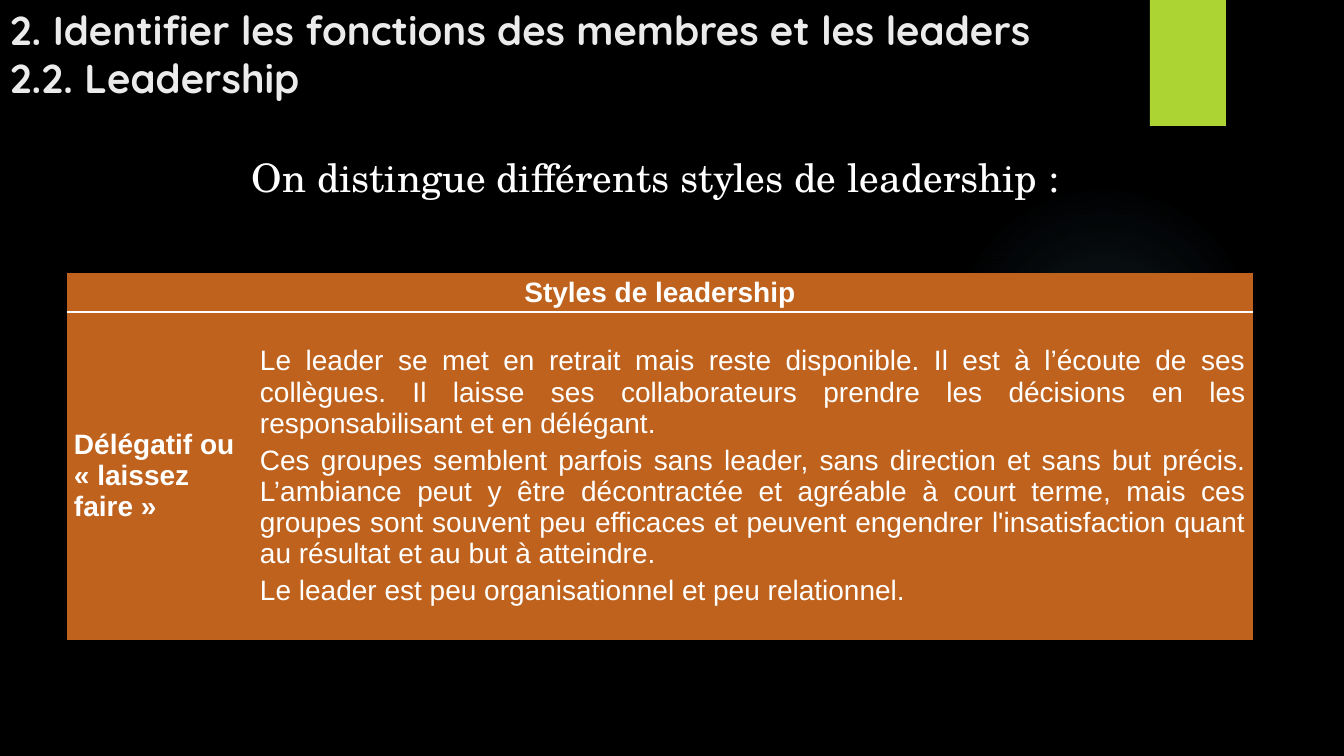
from dataclasses import dataclass

from pptx import Presentation
from pptx import oxml
from pptx import util as u
from pptx.dml import color
from pptx.enum import shapes, text
from pptx.oxml import ns


@dataclass(frozen=True)
class Theme:
    background: str = "000000"
    accent: str = "ACD433"
    glow: str = "7AC4F0"
    table: str = "BF621D"
    heading: str = "EBEBEB"
    body: str = "FFFFFF"
    heading_size: float = 28.8
    intro_size: int = 28
    table_size: int = 20
    rule_width: int = 2
    heading_font: str = "Quicksand"
    intro_font: str = "TeX Gyre Schola"
    table_font: str = "Arial"
    table_style: str = "{2D5ABB26-0587-4C30-8999-92F81FD0307C}"


def px(length):
    return u.Emu(round(length * 914400 / 100.8))


def rgb(value):
    return color.RGBColor.from_string(value)


def assign(target, values):
    for name, value in values.items():
        setattr(target, name, value)


class SlideBuilder:
    def __init__(self, deck, theme):
        self.theme = theme
        self.slide = deck.slides.add_slide(deck.slide_layouts[6])
        self.paint(self.slide.background.fill, theme.background)

    def paint(self, fill, value):
        fill.solid()
        fill.fore_color.rgb = rgb(value)

    def shape(self, kind, box, fill):
        figure = self.slide.shapes.add_shape(kind, *map(px, box))
        figure.shadow.inherit = False
        figure.line.fill.background()
        self.paint(figure.fill, fill)
        return figure

    def glow(self, box, stops):
        halo = self.shape(shapes.MSO_SHAPE.OVAL, box, self.theme.glow)
        stops_xml = "".join(
            f'<a:gs pos="{place * 1000}"><a:srgbClr val="{self.theme.glow}">'
            f'<a:alpha val="{alpha * 1000}"/></a:srgbClr></a:gs>'
            for place, alpha in stops
        )
        gradient = oxml.parse_xml(
            f'<a:gradFill {ns.nsdecls("a")}><a:gsLst>{stops_xml}</a:gsLst>'
            '<a:path path="circle"><a:fillToRect l="50000" t="50000" '
            'r="50000" b="50000"/></a:path></a:gradFill>'
        )
        properties = halo._element.spPr
        properties.replace(properties.find(ns.qn("a:solidFill")), gradient)

    def set_lines(self, frame, lines, font, paragraph_format):
        for index, line in enumerate(lines):
            paragraph = frame.paragraphs[0] if index == 0 else frame.add_paragraph()
            paragraph.text = line
            assign(paragraph, paragraph_format)
            if index == 0:
                paragraph.space_before = u.Pt(0)
            ink = dict(font)
            paragraph.font.color.rgb = rgb(ink.pop("color"))
            assign(paragraph.font, ink)

    def text_box(self, box, line, font, paragraph_format, anchor):
        frame = self.slide.shapes.add_textbox(*map(px, box)).text_frame
        assign(frame, {"word_wrap": True, "vertical_anchor": anchor})
        self.set_lines(frame, [line], font, paragraph_format)

    def table(self, box, columns, rows):
        grid = self.slide.shapes.add_table(len(rows), len(columns), *map(px, box)).table
        assign(grid, {"first_row": False, "horz_banding": False})
        grid._tbl.tblPr.find(ns.qn("a:tableStyleId")).text = self.theme.table_style
        for column, width in zip(grid.columns, columns):
            column.width = px(width)
        for row, height in zip(grid.rows, rows):
            row.height = px(height)
        for cell in grid.iter_cells():
            self.paint(cell.fill, self.theme.table)
        return grid

    def fill_cell(self, cell, lines, paragraph_format, bold):
        assign(cell, {
            "margin_left": px(7), "margin_right": px(7),
            "margin_top": 0, "margin_bottom": 0,
            "vertical_anchor": text.MSO_ANCHOR.MIDDLE,
        })
        font = {"name": self.theme.table_font, "size": u.Pt(self.theme.table_size),
                "bold": bold, "color": self.theme.body}
        self.set_lines(cell.text_frame, lines, font, paragraph_format)

    def rule(self, cell, side):
        cell._tc.get_or_add_tcPr().insert(0, oxml.parse_xml(
            f'<a:{side} {ns.nsdecls("a")} w="{u.Pt(self.theme.rule_width)}"><a:solidFill>'
            f'<a:srgbClr val="{self.theme.body}"/></a:solidFill></a:{side}>'
        ))


def main():
    deck = Presentation()
    assign(deck, {"slide_width": px(1344), "slide_height": px(756)})
    theme = Theme()
    page = SlideBuilder(deck, theme)

    page.glow((949, 184, 310, 310), [(0, 7), (36, 6), (69, 0)])
    page.shape(shapes.MSO_SHAPE.RECTANGLE, (1150, 0, 76, 126), theme.accent)
    page.text_box(
        (0, 0, 1193, 107),
        "2. Identifier les fonctions des membres et les leaders\v2.2. Leadership",
        {"name": theme.heading_font, "size": u.Pt(theme.heading_size),
         "bold": True, "color": theme.heading},
        {}, text.MSO_ANCHOR.BOTTOM,
    )
    page.text_box(
        (242, 148, 883, 57), "On distingue différents styles de leadership :",
        {"name": theme.intro_font, "size": u.Pt(theme.intro_size), "color": theme.body},
        {"alignment": text.PP_ALIGN.JUSTIFY}, text.MSO_ANCHOR.TOP,
    )

    styles = page.table((67, 273, 1186, 367), (186, 1000), (39, 328))
    for column in range(2):
        page.rule(styles.cell(0, column), "lnB")
        page.rule(styles.cell(1, column), "lnT")
    styles.cell(0, 0).merge(styles.cell(0, 1))

    spacing = {"space_before": u.Pt(2), "space_after": u.Pt(2)}
    page.fill_cell(styles.cell(0, 0), ["Styles de leadership"],
                   {"alignment": text.PP_ALIGN.CENTER, **spacing}, True)
    page.fill_cell(styles.cell(1, 0), ["Délégatif ou « laissez faire »"], {}, True)
    page.fill_cell(styles.cell(1, 1), [
        "Le leader se met en retrait mais reste disponible. Il est à l’écoute de ses "
        "collègues. Il laisse ses collaborateurs prendre les décisions en les "
        "responsabilisant et en délégant.",
        "Ces groupes semblent parfois sans leader, sans direction et sans but précis. "
        "L’ambiance peut y être décontractée et agréable à court terme, mais ces "
        "groupes sont souvent peu efficaces et peuvent engendrer l'insatisfaction "
        "quant au résultat et au but à atteindre.",
        "Le leader est peu organisationnel et peu relationnel.",
    ], {"alignment": text.PP_ALIGN.JUSTIFY, **spacing}, False)

    deck.save("out.pptx")


if __name__ == "__main__":
    main()
